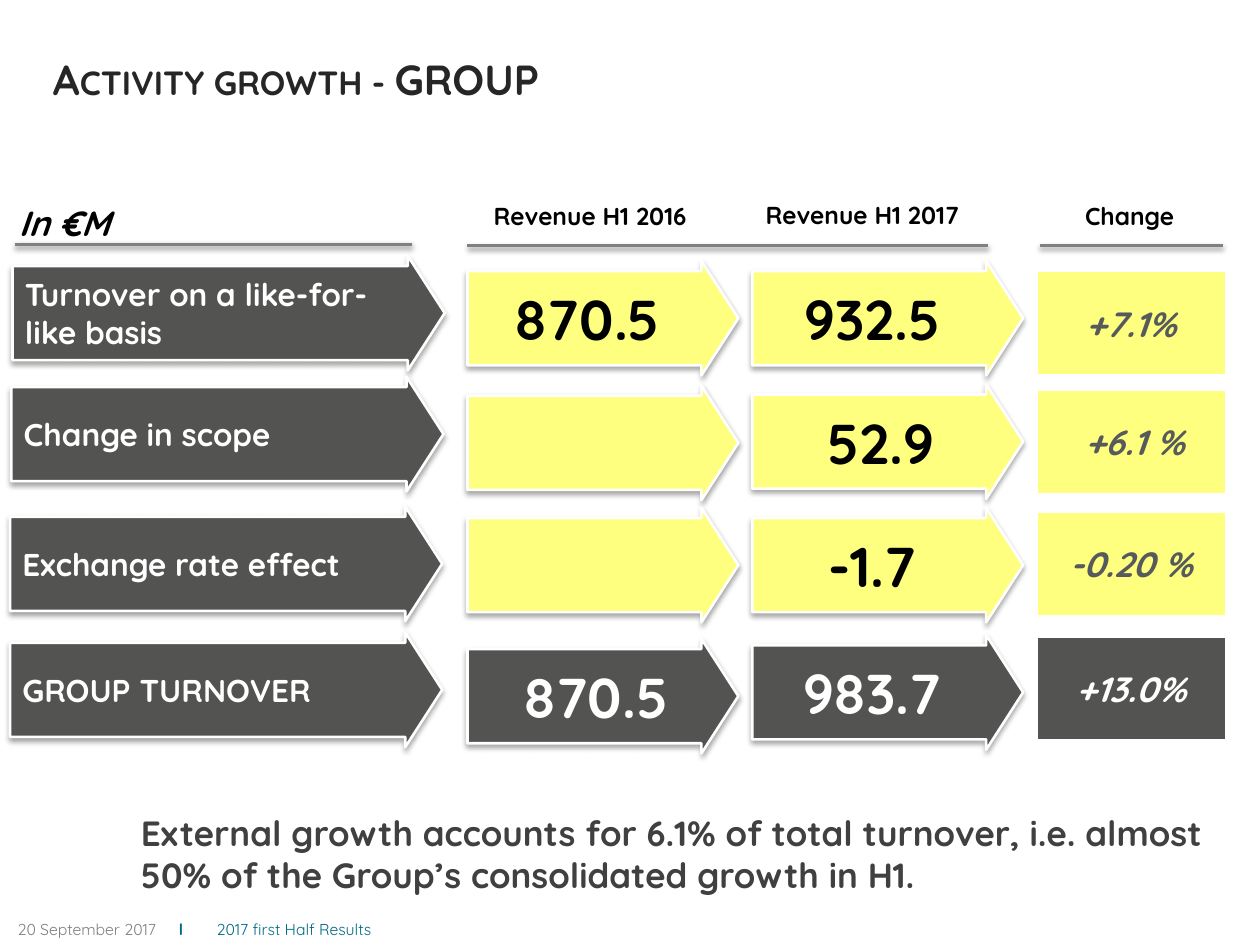
from lxml import etree
from pptx import Presentation
from pptx.dml.color import RGBColor
from pptx.enum.shapes import MSO_CONNECTOR, MSO_SHAPE
from pptx.enum.text import MSO_ANCHOR, PP_ALIGN
from pptx.oxml.ns import qn
from pptx.util import Inches, Pt

ARROW, RECT = MSO_SHAPE.RIGHT_ARROW, MSO_SHAPE.RECTANGLE
STRAIGHT = MSO_CONNECTOR.STRAIGHT
LEFT, CENTER = PP_ALIGN.LEFT, PP_ALIGN.CENTER
TOP, MIDDLE = MSO_ANCHOR.TOP, MSO_ANCHOR.MIDDLE

# Content
TITLE = "Activity growth - GROUP"
UNIT = "In €M"
HEADERS = [  # text, left, top
    ("Revenue H1 2016", 3.66, 1.55),
    ("Revenue H1 2017", 5.82, 1.54),
    ("Change", 7.94, 1.55),
]
RULES = [(0.12, 3.27, 1.94), (3.71, 7.84, 1.95), (8.25, 9.71, 1.95)]  # from x, to x, y
# label, (left, top); (figure, top, nudge) for 2016 and 2017;
# change, tile top, text left; total row or not
ROWS = [
    ("Turnover on a like-for-like basis", (0.10, 2.03),
     [("870.5", 2.07, 0), ("932.5", 2.07, 0)], ("+7.1%", 2.15, 7.95), False),
    ("Change in scope", (0.09, 2.99),
     [("", 3.06, 0), ("52.9", 3.05, 0.13)], ("+6.1 %", 3.09, 7.98), False),
    ("Exchange rate effect", (0.08, 4.02),
     [("", 4.03, 0), ("-1.7", 4.03, 0)], ("-0.20 %", 4.06, 7.95), False),
    ("GROUP TURNOVER", (0.08, 5.02),
     [("870.5", 5.07, 0.13), ("983.7", 5.04, 0)], ("+13.0%", 5.05, 7.95), True),
]
CONCLUSION = ("External growth accounts for 6.1% of total turnover, i.e. almost "
              "50% of the Group’s consolidated growth in H1.")
FOOTER = [("20 September 2017", "muted", False), ("\tl", "teal", True),
          ("\t2017 first Half Results", "teal", False)]
FOOTER_TABS = [1.28, 1.58]

THEME = {
    "font": "Quicksand",
    "color": {"title": "262626", "body": "404040", "black": "000000", "white": "FFFFFF",
              "change": "575A5B", "muted": "808080", "teal": "006983",
              "yellow": "FEFF7F", "dark": "535452"},
    "size": {"title": 24, "note": 20, "figure": 32, "label": 18, "header": 14, "footer": 9},
}

# Layout
FIGURE_LEFTS = [3.71, 5.97]
FIGURE_WIDTH, LABEL_WIDTH, ARROW_HEIGHT = 2.15, 3.43, 0.91
TILE_LEFT, TILE_WIDTH, TILE_HEIGHT = 8.23, 1.5, 0.83
COLUMN_WIDTH = 2.05


def rgb(name):
    return RGBColor.from_string(THEME["color"][name])


def add_run(paragraph, text, size, color, bold=True, italic=False):
    run = paragraph.add_run()
    run.text = text
    font = run.font
    font.name, font.size = THEME["font"], Pt(THEME["size"][size])
    font.bold, font.italic = bold, italic
    font.color.rgb = rgb(color)
    return run


def add_textbox(slide, left, top, width, height, align=LEFT, anchor=TOP, inset=True):
    frame = slide.shapes.add_textbox(
        Inches(left), Inches(top), Inches(width), Inches(height)).text_frame
    frame.word_wrap = True
    frame.vertical_anchor = anchor
    if not inset:
        frame.margin_left = frame.margin_right = frame.margin_top = frame.margin_bottom = 0
    paragraph = frame.paragraphs[0]
    paragraph.alignment = align
    return paragraph


def add_block(slide, kind, left, top, width, height, fill):
    block = slide.shapes.add_shape(
        kind, Inches(left), Inches(top), Inches(width), Inches(height))
    block.shadow.inherit = False
    block.fill.solid()
    block.fill.fore_color.rgb = rgb(fill)
    block.line.color.rgb = rgb("white")
    block.line.width = Pt(1.5)
    return block


def add_shadow(properties, opacity, distance):
    effects = properties.find(qn("a:effectLst"))
    if effects is None:
        effects = etree.SubElement(properties, qn("a:effectLst"))
    shadow = etree.SubElement(effects, qn("a:outerShdw"), blurRad=str(Pt(3.1)),
                              dist=str(Pt(distance)), dir="5400000", rotWithShape="0")
    black = etree.SubElement(shadow, qn("a:srgbClr"), val=THEME["color"]["black"])
    etree.SubElement(black, qn("a:alpha"), val=str(opacity * 1000))


def add_arrow(slide, left, top, width, fill, text, size, color, align, nudge=0):
    arrow = add_block(slide, ARROW, left, top, width, ARROW_HEIGHT, fill)
    arrow.adjustments[0], arrow.adjustments[1] = 0.821, 0.322
    add_shadow(arrow._element.spPr, 35, 1.8)
    if text:
        frame = arrow.text_frame
        frame.word_wrap = True
        frame.vertical_anchor = MIDDLE
        frame.margin_left = Inches(0.1 + nudge)
        frame.paragraphs[0].alignment = align
        add_run(frame.paragraphs[0], text, size, color)


def add_rule(slide, start, end, y):
    rule = slide.shapes.add_connector(
        STRAIGHT, Inches(start), Inches(y), Inches(end), Inches(y))
    rule.line.color.rgb = rgb("muted")
    rule.line.width = Pt(2)
    add_shadow(rule._element.spPr, 38, 1.6)


def add_row(slide, label, label_at, figures, change, is_total):
    fill = "dark" if is_total else "yellow"
    change_text, tile_top, change_left = change
    add_block(slide, RECT, TILE_LEFT, tile_top, TILE_WIDTH, TILE_HEIGHT, fill)
    paragraph = add_textbox(slide, change_left, tile_top + 0.2, COLUMN_WIDTH, 0.44, CENTER)
    add_run(paragraph, change_text, "note", "white" if is_total else "change", italic=True)
    for left, (figure, top, nudge) in zip(FIGURE_LEFTS, figures):
        add_arrow(slide, left, top, FIGURE_WIDTH, fill, figure, "figure",
                  "white" if is_total else "black", CENTER, nudge)
    add_arrow(slide, *label_at, LABEL_WIDTH, "dark", label, "label", "white", LEFT)


def add_footer(slide):
    paragraph = add_textbox(slide, 0.14, 7.23, 4.96, 0.29, anchor=MIDDLE, inset=False)
    tabs = etree.SubElement(paragraph._p.get_or_add_pPr(), qn("a:tabLst"))
    for position in FOOTER_TABS:
        etree.SubElement(tabs, qn("a:tab"), pos=str(Inches(position)), algn="l")
    for text, color, bold in FOOTER:
        add_run(paragraph, text, "footer", color, bold)


def main():
    deck = Presentation()
    deck.slide_width, deck.slide_height = Inches(10), Inches(7.5)
    slide = deck.slides.add_slide(deck.slide_layouts[6])

    # Footer and title
    add_footer(slide)
    title = add_textbox(slide, 0.42, 0.13, 8.28, 0.99, anchor=MIDDLE, inset=False)
    title_run = add_run(title, TITLE, "title", "title")
    title_run.font._element.set("cap", "small")

    # Column headings and rules
    add_run(add_textbox(slide, 0.05, 1.55, 3.72, 0.44), UNIT, "note", "black", italic=True)
    for header, left, top in HEADERS:
        add_run(add_textbox(slide, left, top, COLUMN_WIDTH, 0.34, CENTER),
                header, "header", "black")
    for start, end, y in RULES:
        add_rule(slide, start, end, y)

    # Turnover rows
    for row in ROWS:
        add_row(slide, *row)

    # Conclusion
    add_run(add_textbox(slide, 1.02, 6.39, 8.64, 0.77), CONCLUSION, "note", "body")

    deck.save("out.pptx")


if __name__ == "__main__":
    main()
